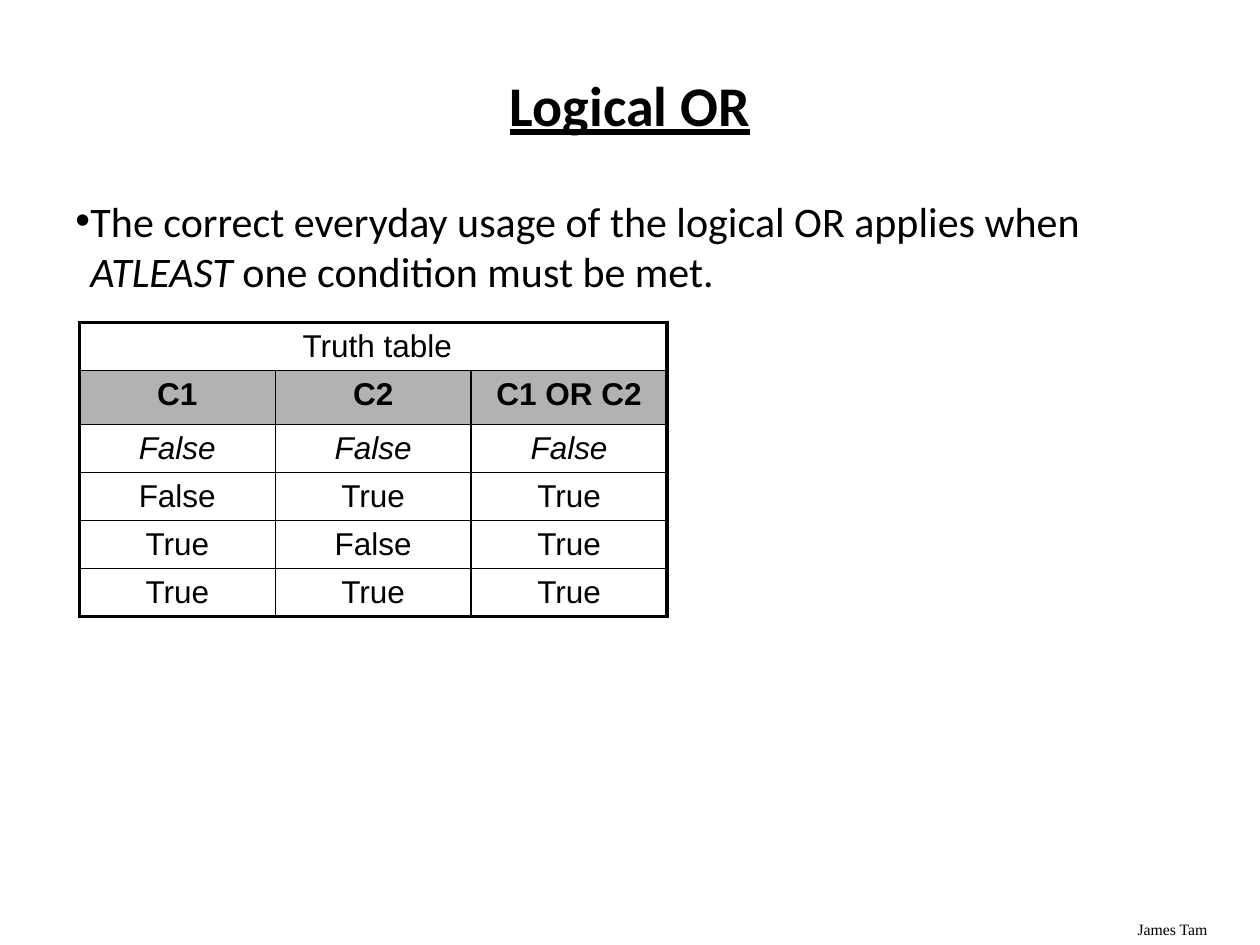
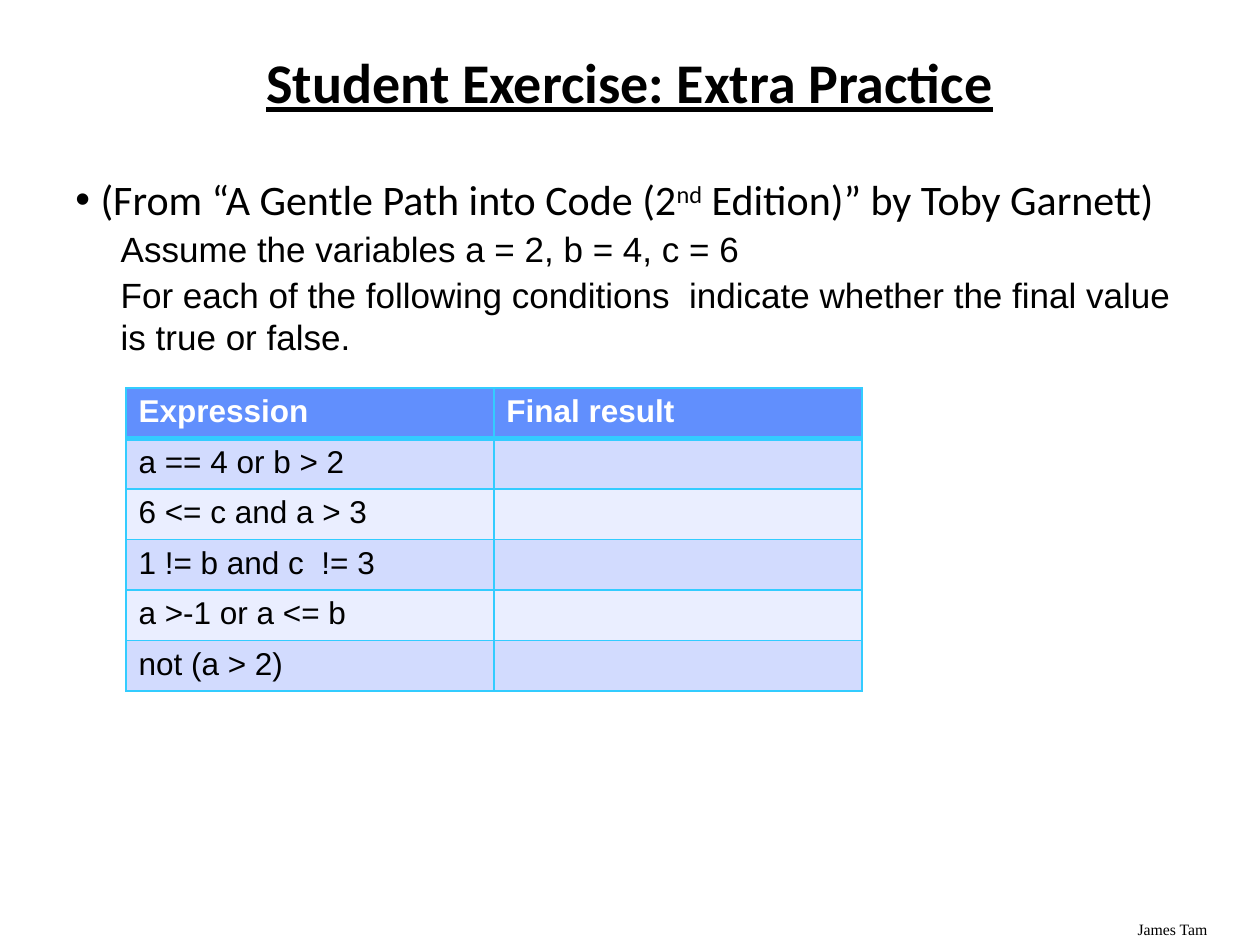
from pptx import Presentation
from pptx.dml.color import RGBColor
from pptx.enum.text import MSO_ANCHOR, PP_ALIGN
from pptx.oxml.ns import qn
from pptx.util import Inches, Pt
from lxml import etree

CENTER, LEFT = PP_ALIGN.CENTER, PP_ALIGN.LEFT
TOP, MIDDLE = MSO_ANCHOR.TOP, MSO_ANCHOR.MIDDLE

BLACK = RGBColor(0x00, 0x00, 0x00)
WHITE = RGBColor(0xFF, 0xFF, 0xFF)
GREY = RGBColor(0xB2, 0xB2, 0xB2)
CYAN = RGBColor(0x33, 0xCC, 0xFF)
BLUE = RGBColor(0x61, 0x8F, 0xFD)
BANDS = (RGBColor(0xD2, 0xDB, 0xFE), RGBColor(0xEA, 0xEE, 0xFF))

TITLE = dict(name="Calibri", size=Pt(32), bold=True, underline=True)
POINT = dict(name="Calibri", size=Pt(24))
SUBPOINT = dict(name="Arial", size=Pt(20))
CELL = dict(name="Arial", size=Pt(18))
FOOTER = dict(name="Times New Roman", size=Pt(9))

PLAIN_TABLE_STYLE = "{2D5ABB26-0587-4C30-8999-92F81FD0307C}"
WIDTH, HEIGHT = 10, 7.5
MARGIN = WIDTH / 20


# Text
def add_span(para, text, style, color=BLACK, baseline=0):
    span = para.add_run()
    span.text = text
    for name, value in style.items():
        setattr(span.font, name, value)
    span.font.color.rgb = color
    if baseline:
        span._r.get_or_add_rPr().set("baseline", str(baseline * 1000))


def add_box(page, left, top, width, height, anchor=TOP):
    box = page.shapes.add_textbox(*map(Inches, (left, top, width, height)))
    frame = box.text_frame
    frame.word_wrap = True
    frame.vertical_anchor = anchor
    return frame


def set_indent(para, left, bullet=False):
    properties = para._p.get_or_add_pPr()
    properties.set("marL", str(Inches(left)))
    properties.set("indent", str(Inches(-left if bullet else 0)))
    if bullet:
        etree.SubElement(properties, qn("a:buFont"), typeface="Arial")
        etree.SubElement(properties, qn("a:buChar"), char="•")


def add_page(deck, title, top, height):
    """Add a page with the shared title style and footer."""
    page = deck.slides.add_slide(deck.slide_layouts[6])
    para = add_box(page, MARGIN, top, WIDTH - 2 * MARGIN, height, MIDDLE).paragraphs[0]
    para.alignment = CENTER
    para.line_spacing = 0.9
    add_span(para, title, TITLE)
    footer = add_box(page, 8.93, HEIGHT - 0.25, 1, 0.25)
    add_span(footer.paragraphs[0], "James Tam", FOOTER)
    return page


# Tables
def set_border(cell, side, weight, color):
    line = etree.SubElement(cell._tc.get_or_add_tcPr(), qn("a:ln" + side), w=str(Pt(weight)))
    fill = etree.SubElement(line, qn("a:solidFill"))
    etree.SubElement(fill, qn("a:srgbClr"), val=str(color))


def add_grid(page, left, top, column_width, row_heights, columns):
    width = column_width * columns
    frame = page.shapes.add_table(
        len(row_heights), columns,
        *map(Inches, (left, top, width, sum(row_heights))))
    table = frame.table
    table._tbl.tblPr.find(qn("a:tableStyleId")).text = PLAIN_TABLE_STYLE
    for column in table.columns:
        column.width = Inches(column_width)
    for row, height in zip(table.rows, row_heights):
        row.height = Inches(height)
    return table


def rule_grid(table, column_lines, row_lines, color):
    """Draw grid lines, given the weight of each vertical and horizontal line."""
    for r, row in enumerate(table.rows):
        for c, cell in enumerate(row.cells):
            end = c + (cell.span_width if cell.is_merge_origin else 1)
            if not cell.is_spanned:
                set_border(cell, "L", column_lines[c], color)
            if not cell.is_spanned or end == len(table.columns):
                set_border(cell, "R", column_lines[end], color)
            set_border(cell, "T", row_lines[r], color)
            set_border(cell, "B", row_lines[r + 1], color)


def fill_cell(cell, text, style, fill=None, color=BLACK, alignment=LEFT, bottom=0.05):
    cell.margin_top, cell.margin_bottom = Inches(0.05), Inches(bottom)
    if fill is None:
        cell.fill.background()
    else:
        cell.fill.solid()
        cell.fill.fore_color.rgb = fill
    para = cell.text_frame.paragraphs[0]
    para.alignment = alignment
    if text:
        add_span(para, text, style, color)
    else:
        para.font.size = style["size"]


def add_truth_table(page):
    rows = [
        (" Truth table", "", ""),
        ("C1", "C2", "C1 OR C2"),
        ("False", "False", "False"),
        ("False", "True", "True"),
        ("True", "False", "True"),
        ("True", "True", "True"),
    ]
    emphasis = {1: dict(CELL, bold=True), 2: dict(CELL, italic=True)}
    table = add_grid(page, 0.63, 2.56, 1.555, [0.38, 0.43] + [0.38] * 4, 3)
    table.cell(0, 0).merge(table.cell(0, 2))
    rule_grid(table, [2.25, 1, 1, 2.25], [2.25] + [1] * 5 + [2.25], BLACK)
    for r, texts in enumerate(rows):
        for c, text in enumerate(texts):
            fill_cell(table.cell(r, c), text, emphasis.get(r, CELL),
                      GREY if r == 1 else None, alignment=CENTER, bottom=0.03)


def add_exercise_table(page):
    expressions = ["a == 4 or b > 2", "6 <= c and a > 3", "1 != b and c  != 3",
                   "a >-1 or a <= b", "not (a > 2)"]
    table = add_grid(page, 1, 3.08, 2.92, [0.4] * (len(expressions) + 1), 2)
    rule_grid(table, [1] * 3, [1, 3] + [1] * len(expressions), CYAN)
    for c, heading in enumerate(("Expression", "Final result")):
        fill_cell(table.cell(0, c), heading, dict(CELL, bold=True), BLUE, WHITE)
    for r, expression in enumerate(expressions):
        for c, text in enumerate((expression, "")):
            fill_cell(table.cell(r + 1, c), text, CELL, BANDS[r % 2])


# Pages
def add_logical_or(deck):
    page = add_page(deck, "Logical OR", 0.3, 1.12)
    para = add_box(page, MARGIN, 1.5, 8.8, 5.58).paragraphs[0]
    set_indent(para, 0.12, bullet=True)
    add_span(para, "The correct everyday usage of the logical OR applies when ", POINT)
    add_span(para, "ATLEAST", dict(POINT, italic=True))
    add_span(para, " one condition must be met.", POINT)
    add_truth_table(page)


def add_exercise(deck):
    page = add_page(deck, "Student Exercise: Extra Practice", 0.28, 0.8)
    body = add_box(page, MARGIN, 1.33, WIDTH - 2 * MARGIN, 2.33)
    para = body.paragraphs[0]
    set_indent(para, 0.2, bullet=True)
    add_span(para, "(From “A Gentle Path into Code (2", POINT)
    add_span(para, "nd", POINT, baseline=30)
    add_span(para, " Edition)” by Toby Garnett)", POINT)
    for text in (
        "Assume the variables a = 2, b = 4, c = 6",
        "For each of the following conditions  indicate whether the final value "
        "is true or false.",
    ):
        para = body.add_paragraph()
        para.level = 1
        para.space_before = Pt(2)
        set_indent(para, 0.36)
        add_span(para, text, SUBPOINT)
    add_exercise_table(page)


def main():
    deck = Presentation()
    deck.slide_width, deck.slide_height = Inches(WIDTH), Inches(HEIGHT)
    add_logical_or(deck)
    add_exercise(deck)
    deck.save("out.pptx")


if __name__ == "__main__":
    main()
